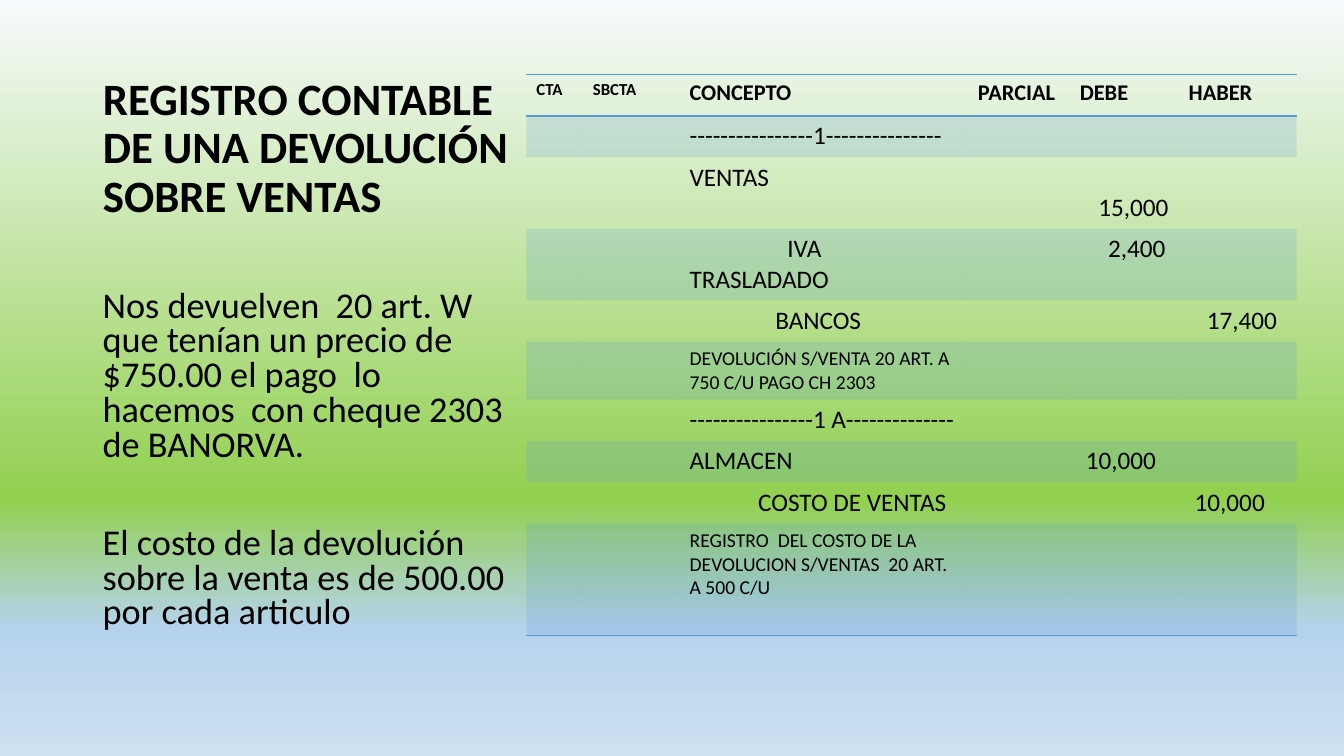
import pptx
import pptx.dml.color
import pptx.enum.text
import pptx.oxml
import pptx.oxml.ns
import pptx.util

Inches = pptx.util.Inches
ALIGN = pptx.enum.text.PP_ALIGN
ANCHOR = pptx.enum.text.MSO_ANCHOR
FONT = "Calibri"
BLACK = "000000"
BLUE = "5B9BD5"
PLAIN = "{2D5ABB26-0587-4C30-8999-92F81FD0307C}"

STOPS = [(0, "F7FAFD"), (66, "92D050"), (83, "B5D2EC"), (100, "CEE1F2")]
WIDTHS = [0.56, 0.96, 2.86, 1.01, 1.08, 1.17]
HEADS = [("CTA", 12), ("SBCTA", 12), ("CONCEPTO", 16),
         ("PARCIAL", 16), ("DEBE", 16), ("HABER", 16)]
ROWS = [
    (0.41, {2: ("----------------1---------------", 18, 0)}),
    (0.71, {2: ("VENTAS", 18, 0), 4: ("15,000", 18, None)}),
    (0.71, {2: ("IVA TRASLADADO", 18, 0.97), 4: ("2,400", 18, 0.28)}),
    (0.41, {2: ("BANCOS", 18, 0.85), 5: ("17,400", 18, 0.18)}),
    (0.57, {2: ("DEVOLUCIÓN S/VENTA 20 ART. A 750 C/U PAGO CH 2303", 14, 0)}),
    (0.41, {2: ("----------------1 A--------------", 18, 0)}),
    (0.41, {2: ("ALMACEN", 18, 0), 4: ("10,000", 18, 0.06)}),
    (0.41, {2: ("COSTO DE VENTAS", 18, 0.68), 5: ("10,000", 18, 0.06)}),
    (1.11, {2: ("REGISTRO  DEL COSTO DE LA DEVOLUCION S/VENTAS  20 ART. "
                "A 500 C/U", 14, 0)}),
]
NOTES = [
    ("Nos devuelven  20 art. W que tenían un precio de $750.00 el pago  lo "
     "hacemos  con cheque 2303 de BANORVA.", 10),
    ("El costo de la devolución sobre la venta es de 500.00 por cada "
     "articulo", 45),
]


def shade(color, tone):
    color.rgb = pptx.dml.color.RGBColor.from_string(tone)


def add_run(para, text, size, bold=False):
    run = para.add_run()
    run.text = text
    run.font.name = FONT
    run.font.size = pptx.util.Pt(size)
    run.font.bold = bold
    shade(run.font.color, BLACK)


def make_node(xml):
    space = pptx.oxml.ns.nsdecls("a")
    return pptx.oxml.parse_xml(xml.replace(">", f" {space}>", 1))


def paint_back(slide):
    fill = slide.background.fill
    fill.gradient()
    fill.gradient_angle = 270
    stops = slide._element.find(".//" + pptx.oxml.ns.qn("a:gsLst"))
    for stop in list(stops):
        stops.remove(stop)
    for place, tone in STOPS:
        stops.append(make_node(
            f'<a:gs pos="{place * 1000}"><a:srgbClr val="{tone}"/></a:gs>'))


def add_title(slide, text):
    title = slide.shapes.title
    title.left, title.top = Inches(0.92), Inches(0.5)
    title.width, title.height = Inches(4.3), Inches(1.75)
    frame = title.text_frame
    frame.word_wrap = True
    frame.auto_size = pptx.enum.text.MSO_AUTO_SIZE.NONE
    frame.vertical_anchor = ANCHOR.BOTTOM
    para = frame.paragraphs[0]
    para.alignment = ALIGN.LEFT
    para.line_spacing = 0.9
    add_run(para, text, 32, True)


def add_notes(slide):
    box = slide.shapes.add_textbox(
        Inches(0.92), Inches(2.83), Inches(4.3), Inches(3.59))
    frame = box.text_frame
    frame.word_wrap = True
    for num, (text, gap) in enumerate(NOTES):
        para = frame.add_paragraph() if num else frame.paragraphs[0]
        para.line_spacing = 0.8
        para.space_before = pptx.util.Pt(gap)
        add_run(para, text, 25.9)


def fill_cell(cell, band):
    if not band:
        cell.fill.background()
        return
    cell.fill.solid()
    shade(cell.fill.fore_color, BLUE)
    tone = cell._tc.tcPr.find(".//" + pptx.oxml.ns.qn("a:srgbClr"))
    tone.append(make_node('<a:alpha val="20000"></a:alpha>'))


def rule_cell(cell, sides):
    for spot, side in enumerate(sides):
        cell._tc.get_or_add_tcPr().insert(spot, make_node(
            f'<a:ln{side} w="12700"><a:solidFill><a:srgbClr val="{BLUE}"/>'
            f'</a:solidFill></a:ln{side}>'))


def write_cell(cell, text, size, indent=0, bold=False):
    para = cell.text_frame.paragraphs[0]
    if indent is None:
        para.alignment = ALIGN.RIGHT
        cell.vertical_anchor = ANCHOR.BOTTOM
    elif indent:
        para._p.get_or_add_pPr().set("indent", str(Inches(indent)))
    add_run(para, text, size, bold)


def add_ledger(slide):
    highs = [0.41] + [high for high, _ in ROWS]
    frame = slide.shapes.add_table(
        len(highs), len(WIDTHS), Inches(5.22), Inches(0.74),
        Inches(sum(WIDTHS)), Inches(sum(highs)))
    table = frame.table
    table.first_row = table.horz_banding = False
    table._tbl.tblPr.find(pptx.oxml.ns.qn("a:tableStyleId")).text = PLAIN
    for col, width in zip(table.columns, WIDTHS):
        col.width = Inches(width)
    for num, high in enumerate(highs):
        table.rows[num].height = Inches(high)
        for cell in table.rows[num].cells:
            fill_cell(cell, num % 2)
            if num == 0:
                rule_cell(cell, "TB")
            elif num == len(ROWS):
                rule_cell(cell, "B")
    for col, (text, size) in enumerate(HEADS):
        write_cell(table.cell(0, col), text, size, bold=True)
    for num, (_, items) in enumerate(ROWS, 1):
        for col, item in items.items():
            write_cell(table.cell(num, col), *item)


def main():
    deck = pptx.Presentation()
    deck.slide_width, deck.slide_height = Inches(13.33), Inches(7.5)
    slide = deck.slides.add_slide(deck.slide_layouts[5])
    paint_back(slide)
    add_title(slide, "REGISTRO CONTABLE DE UNA DEVOLUCIÓN SOBRE VENTAS")
    add_ledger(slide)
    add_notes(slide)
    deck.save("out.pptx")


if __name__ == "__main__":
    main()
